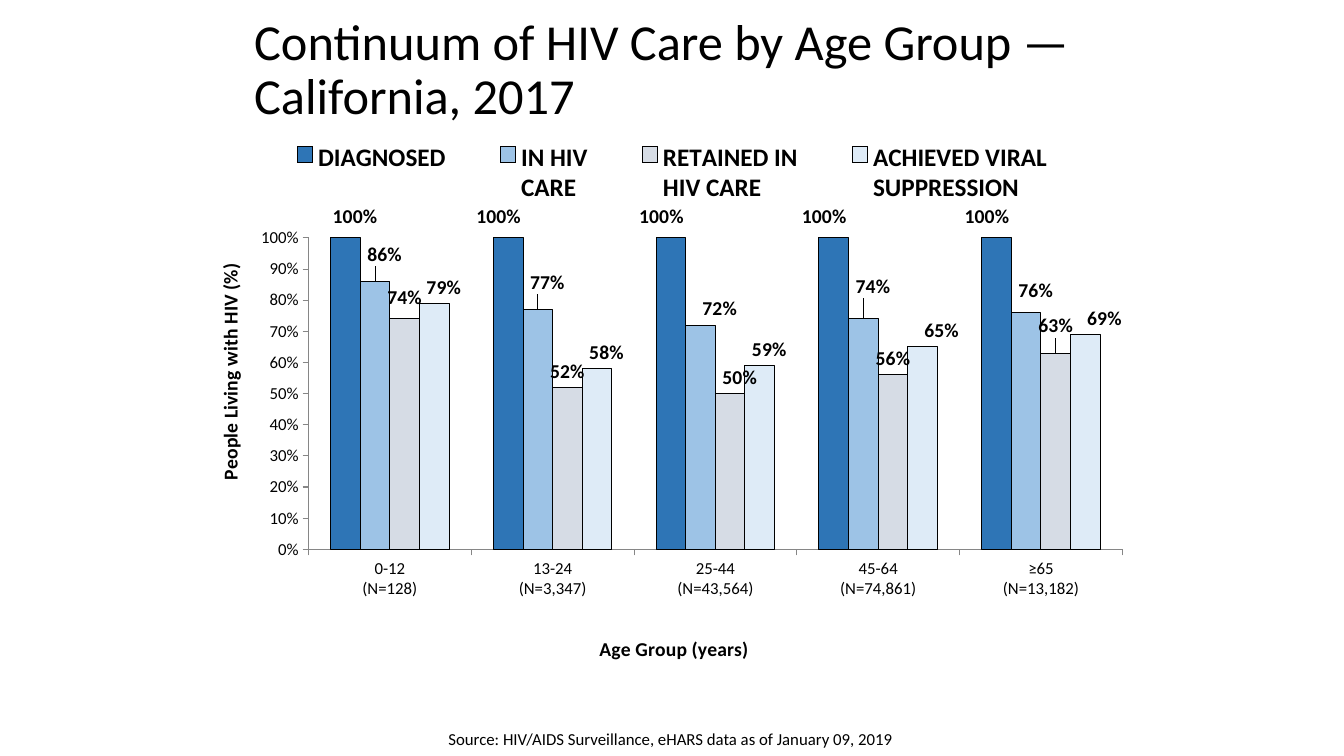
from dataclasses import dataclass

from pptx import Presentation
from pptx.chart.data import CategoryChartData
from pptx.dml.color import RGBColor
from pptx.enum.chart import XL_CHART_TYPE, XL_LABEL_POSITION, XL_LEGEND_POSITION, XL_TICK_MARK
from pptx.enum.text import MSO_ANCHOR, MSO_AUTO_SIZE, PP_ALIGN
from pptx.oxml import parse_xml
from pptx.oxml.ns import nsdecls, qn
from pptx.util import Cm, Pt

COLUMNS = XL_CHART_TYPE.COLUMN_CLUSTERED
OUTSIDE_END = XL_LABEL_POSITION.OUTSIDE_END
LEGEND_RIGHT = XL_LEGEND_POSITION.RIGHT
TICK_OUTSIDE = XL_TICK_MARK.OUTSIDE
MIDDLE, TOP = MSO_ANCHOR.MIDDLE, MSO_ANCHOR.TOP
NO_FIT = MSO_AUTO_SIZE.NONE
LEFT = PP_ALIGN.LEFT
TITLE_ONLY = 5

AGE_GROUPS = ["0-12\n(N=128)", "13-24\n(N=3,347)", "25-44\n(N=43,564)",
              "45-64\n(N=74,861)", "≥65\n(N=13,182)"]
CARE_STAGES = [
    ("DIAGNOSED", "2E75B6", [1, 1, 1, 1, 1],
     [(0.01, -0.01)] + [(-0.01, -0.01)] * 4),
    ("IN HIV\nCARE", "9DC3E6", [0.86, 0.77, 0.72, 0.74, 0.76],
     [(0.01, -0.02), (0.01, -0.02), (0.02, 0), (0.01, -0.03), (0.01, -0.01)]),
    ("RETAINED IN\nHIV CARE", "D6DCE5", [0.74, 0.52, 0.5, 0.56, 0.63],
     [(0, -0.01), (0, 0), (0.01, 0), (0, 0), (0, -0.02)]),
    ("ACHIEVED VIRAL\nSUPPRESSION", "DEEBF7", [0.79, 0.58, 0.59, 0.65, 0.69],
     [(0.01, 0), (0.01, 0), (0.01, 0), (0.02, 0), (0.02, 0)]),
]


@dataclass(frozen=True)
class Theme:
    """Hold the colours, font and type sizes of the slide."""
    font: str = "Calibri"
    text: str = "000000"
    axis: str = "868686"
    title_size: float = 36
    legend_size: float = 18
    label_size: float = 14
    body_size: float = 12


def set_layout(element, after=None, target="", **values):
    """Place a chart part by fractions of the chart's size."""
    for old in element.findall(qn("c:layout")):
        element.remove(old)
    modes = "" if after == "c:idx" else '<c:xMode val="edge"/><c:yMode val="edge"/>'
    inner = f'<c:layoutTarget val="{target}"/>' if target else ""
    numbers = "".join(f'<c:{key} val="{value}"/>' for key, value in values.items())
    layout = parse_xml(f'<c:layout {nsdecls("c")}><c:manualLayout>{inner}{modes}{numbers}'
                       '</c:manualLayout></c:layout>')
    if after:
        element.find(qn(after)).addnext(layout)
    else:
        element.insert(0, layout)


class SlideBuilder:
    """Add styled elements to one slide."""

    def __init__(self, presentation, theme):
        """Start a title-only slide."""
        self.theme = theme
        self.slide = presentation.slides.add_slide(presentation.slide_layouts[TITLE_ONLY])

    def style(self, font, size, bold=False):
        """Format a font in the theme's style."""
        font.name = self.theme.font
        font.size = Pt(size)
        font.bold = bold
        font.color.rgb = RGBColor.from_string(self.theme.text)

    def put_text(self, text_frame, text, size, bold=False, align=None, spacing=None):
        """Put one formatted paragraph into a text frame."""
        paragraph = text_frame.paragraphs[0]
        paragraph.alignment = align
        paragraph.line_spacing = spacing
        run = paragraph.add_run()
        run.text = text
        self.style(run.font, size, bold)

    def title(self, text, left, top, width, height):
        """Move and fill the title placeholder."""
        shape = self.slide.shapes.title
        shape.left, shape.top, shape.width, shape.height = left, top, width, height
        shape.text_frame.vertical_anchor = MIDDLE
        shape.text_frame.auto_size = NO_FIT
        self.put_text(shape.text_frame, text, self.theme.title_size, align=LEFT, spacing=0.9)

    def text(self, text, left, top, width, height):
        """Add a small text box."""
        text_frame = self.slide.shapes.add_textbox(left, top, width, height).text_frame
        text_frame.word_wrap = True
        text_frame.vertical_anchor = TOP
        self.put_text(text_frame, text, self.theme.body_size, align=LEFT)

    def axis(self, axis, title, x, y, rotation):
        """Format a chart axis and place its title."""
        axis.has_major_gridlines = False
        axis.major_tick_mark = TICK_OUTSIDE
        axis.format.line.color.rgb = RGBColor.from_string(self.theme.axis)
        axis.format.line.width = Pt(0.75)
        self.style(axis.tick_labels.font, self.theme.body_size)
        text_frame = axis.axis_title.text_frame
        self.put_text(text_frame, title, self.theme.label_size, bold=True)
        element = axis.axis_title._element
        for body in element.iter(qn("a:bodyPr")):
            body.set("rot", str(rotation))
            body.set("vert", "horz")
        set_layout(element, after="c:tx", x=x, y=y)

    def series(self, series, color, offsets):
        """Format one series and shift its value labels."""
        series.format.fill.solid()
        series.format.fill.fore_color.rgb = RGBColor.from_string(color)
        series.format.line.color.rgb = RGBColor.from_string(self.theme.text)
        series.format.line.width = Pt(0.75)
        labels = series.data_labels
        labels.show_value = True
        labels.number_format = "0%"
        labels.number_format_is_linked = False
        labels.position = OUTSIDE_END
        self.style(labels.font, self.theme.label_size, bold=True)
        for index, (x, y) in enumerate(offsets):
            label = series.points[index].data_label
            self.style(label.font, self.theme.label_size, bold=True)
            label.position = OUTSIDE_END
            element = labels._element.findall(qn("c:dLbl"))[index]
            set_layout(element, after="c:idx", x=x, y=y)

    def column_chart(self, categories, stages, left, top, width, height):
        """Add the clustered column chart with its legend."""
        data = CategoryChartData(number_format="0%")
        data.categories = categories
        for name, _, values, _ in stages:
            data.add_series(name, values)
        chart = self.slide.shapes.add_chart(COLUMNS, left, top, width, height, data).chart
        chart.has_title = False
        self.style(chart.font, self.theme.body_size)
        plot = chart.plots[0]
        plot.gap_width = 150
        plot.overlap = 0
        plot.vary_by_categories = False
        for series, (_, color, _, offsets) in zip(plot.series, stages):
            self.series(series, color, offsets)
        self.axis(chart.category_axis, "Age Group (years)", 0.42, 0.91, 0)
        value_axis = chart.value_axis
        self.axis(value_axis, "People Living with HIV (%)", 0.02, 0.23, -5400000)
        value_axis.minimum_scale, value_axis.maximum_scale = 0, 1
        value_axis.major_unit = 0.1
        value_axis.tick_labels.number_format = "0%"
        value_axis.tick_labels.number_format_is_linked = False
        chart.has_legend = True
        chart.legend.position = LEGEND_RIGHT
        chart.legend.include_in_layout = False
        self.style(chart.legend.font, self.theme.legend_size, bold=True)
        set_layout(chart.legend._element, after="c:legendPos", x=0.06, y=0.01, w=0.88, h=0.12)
        plot_area = chart._chartSpace.find(".//" + qn("c:plotArea"))
        set_layout(plot_area, target="inner", x=0.12, y=0.19, w=0.85, h=0.57)


def main():
    """Build and save the slide."""
    presentation = Presentation()
    presentation.slide_width, presentation.slide_height = Cm(33.87), Cm(19.05)
    builder = SlideBuilder(presentation, Theme())
    builder.title("Continuum of HIV Care by Age Group — California, 2017",
                  Cm(6.15), Cm(0.2), Cm(22.02), Cm(3.18))
    builder.column_chart(AGE_GROUPS, CARE_STAGES, Cm(4.88), Cm(3.38), Cm(24.13), Cm(13.77))
    builder.text("Source: HIV/AIDS Surveillance, eHARS data as of January 09, 2019",
                 Cm(11.05), Cm(18.24), Cm(13.94), Cm(0.76))
    presentation.save("out.pptx")


if __name__ == "__main__":
    main()
